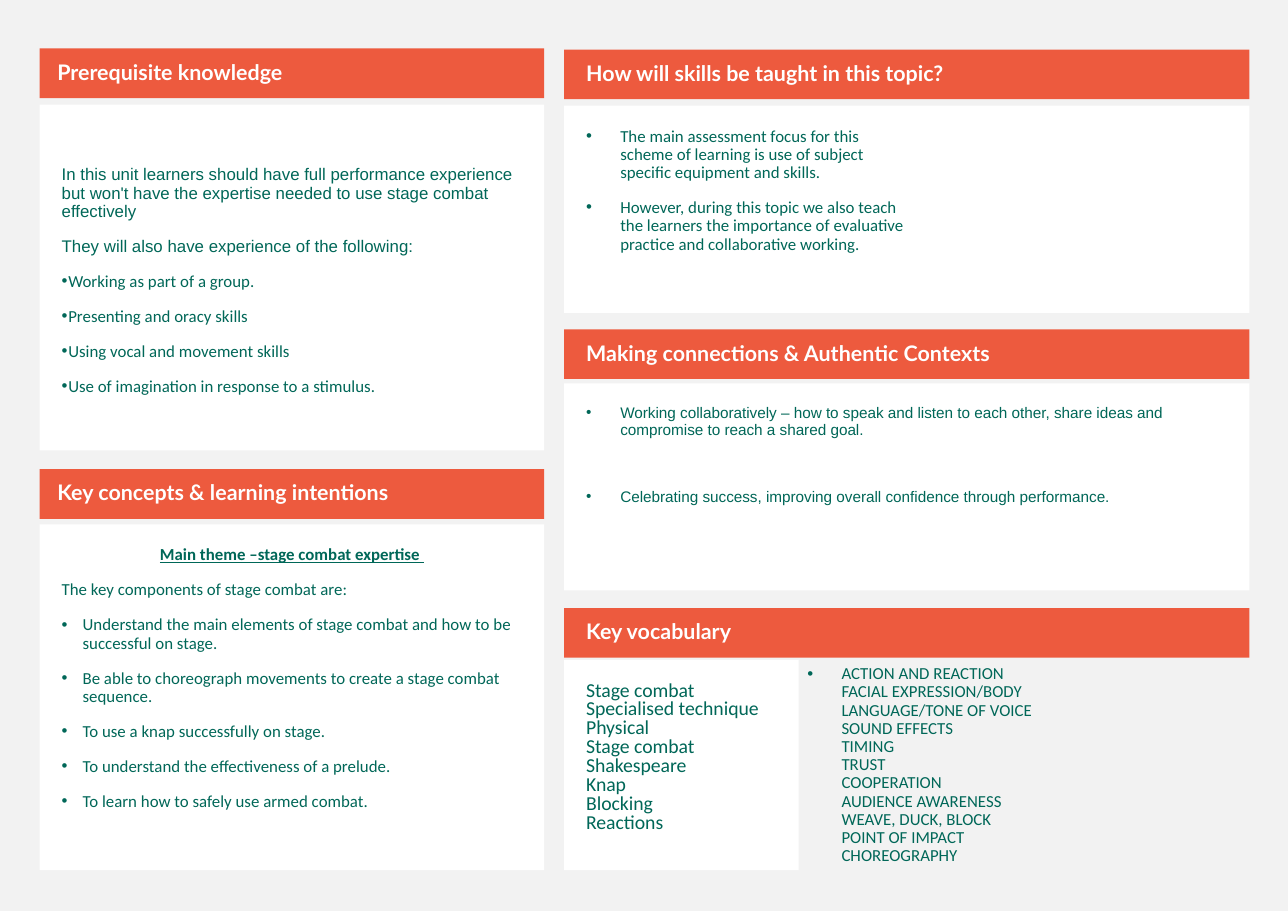
import pptx
import pptx.util
import pptx.dml.color
import pptx.enum.shapes
import pptx.enum.text
import lxml.etree

Inches = pptx.util.Inches
Pt = pptx.util.Pt
ALIGN = pptx.enum.text.PP_ALIGN
ANCHOR = pptx.enum.text.MSO_ANCHOR
COLOURS = {"page": "F2F2F2", "banner": "ED5A3E", "panel": "FFFFFF",
           "text": "006758", "title": "FFFFFF"}
BANNER_HEIGHT = 0.45
PANEL_INSETS = (0.2, 0.2, 0.2, 0.2)

PREREQUISITES = [
    "In this unit learners should have full performance experience but won't "
    "have the expertise needed to use stage combat effectively",
    "They will also have experience of the following:",
]
EXPERIENCE = ["Working as part of a group.", "Presenting and oracy skills",
              "Using vocal and movement skills",
              "Use of imagination in response to a stimulus."]
INTENTIONS = [
    "Understand the main elements of stage combat and how to be successful on stage.",
    "Be able to choreograph movements to create a stage combat sequence.",
    "To use a knap successfully on stage.",
    "To understand the effectiveness of a prelude.",
    "To learn how to safely use armed combat.",
]
SKILLS = [
    "The main assessment focus for this scheme of learning is use of subject "
    "specific equipment and skills.",
    "However, during this topic we also teach the learners the importance of "
    "evaluative practice and collaborative working.",
]
CONNECTIONS = [
    "Working collaboratively – how to speak and listen to each other, share ideas "
    "and compromise to reach a shared goal.",
    "Celebrating success, improving overall confidence through performance.",
]
VOCABULARY = ["Stage combat", "Specialised technique", "Physical", "Stage combat",
              "Shakespeare", "Knap", "Blocking", "Reactions"]
TERMS = ["ACTION AND REACTION", "FACIAL EXPRESSION/BODY LANGUAGE/TONE OF VOICE",
         "SOUND EFFECTS", "TIMING", "TRUST", "COOPERATION", "AUDIENCE AWARENESS",
         "WEAVE, DUCK, BLOCK", "POINT OF IMPACT", "CHOREOGRAPHY"]


def colour(name):
    return pptx.dml.color.RGBColor.from_string(COLOURS[name])


def set_frame(frame, insets, anchor=ANCHOR.TOP):
    frame.word_wrap = True
    frame.vertical_anchor = anchor
    (frame.margin_left, frame.margin_top,
     frame.margin_right, frame.margin_bottom) = map(Inches, insets)


def add_box(page, box, fill, insets, anchor=ANCHOR.TOP):
    shape = page.shapes.add_shape(pptx.enum.shapes.MSO_SHAPE.RECTANGLE, *map(Inches, box))
    shape.shadow.inherit = False
    shape.fill.solid()
    shape.fill.fore_color.rgb = colour(fill)
    shape.line.fill.background()
    set_frame(shape.text_frame, insets, anchor)
    return shape.text_frame


def add_bullet(para, hang):
    properties = para._p.get_or_add_pPr()
    properties.set("marL", str(Inches(hang)))
    properties.set("indent", str(-Inches(hang)))
    for tag, key, value in (("a:buFont", "typeface", "Arial"), ("a:buChar", "char", "•")):
        element = lxml.etree.SubElement(properties, pptx.oxml.ns.qn(tag))
        element.set(key, value)


def add_span(para, text, font="Calibri", size=11, ink="text", bold=False, underline=False):
    span = para.add_run()
    span.text = text
    span.font.name = font
    span.font.size = Pt(size)
    span.font.bold = bold
    span.font.underline = underline
    span.font.color.rgb = colour(ink)


def add_para(frame, lines, hang=None, before=11, spacing=0.9, align=ALIGN.LEFT, **look):
    para = frame.paragraphs[0]
    if para.runs:
        para = frame.add_paragraph()
    para.alignment = align
    para.line_spacing = spacing
    para.space_before = Pt(before)
    if hang is not None:
        add_bullet(para, hang)
    for number, line in enumerate(lines):
        if number:
            para.add_line_break()
        add_span(para, line, **look)


def add_banner(page, box, title, inset):
    left, top, width, _ = box
    frame = add_box(page, (left, top, width, BANNER_HEIGHT), "banner",
                    (inset, 0.05, 0.1, 0.05), ANCHOR.MIDDLE)
    add_para(frame, [title], font="Lato", size=14, ink="title", bold=True)


def add_panel(page, box, offset, insets=PANEL_INSETS):
    left, top, width, height = box
    return add_box(page, (left, top + offset, width, height - offset), "panel", insets)


def prerequisite_region(page, box):
    frame = add_panel(page, box, 0.51, (0.2, 0.56, 0.2, 0.2))
    add_banner(page, box, "Prerequisite knowledge", 0.16)
    for text in PREREQUISITES:
        add_para(frame, [text], font="Arial")
    for text in EXPERIENCE:
        add_para(frame, [text], hang=0.06)


def concepts_region(page, box):
    frame = add_panel(page, box, 0.5)
    add_banner(page, box, "Key concepts & learning intentions", 0.16)
    add_para(frame, ["Main theme –stage combat expertise "], align=ALIGN.CENTER,
             bold=True, underline=True)
    add_para(frame, ["The key components of stage combat are:"])
    for text in INTENTIONS:
        add_para(frame, [text], hang=0.19)


def skills_region(page, box):
    frame = add_panel(page, box, 0.51)
    add_banner(page, box, "How will skills be taught in this topic?", 0.2)
    frame._txBody.bodyPr.set("numCol", "2")
    for text in SKILLS:
        add_para(frame, [text], hang=0.31)


def connections_region(page, box):
    frame = add_panel(page, box, 0.49)
    add_banner(page, box, "Making connections & Authentic Contexts", 0.2)
    for text in CONNECTIONS:
        add_para(frame, [text], hang=0.31, before=33, font="Arial", size=10)


def vocabulary_region(page, box):
    left, top, width, height = box
    frame = add_panel(page, (left, top, 2.13, height), 0.47)
    add_banner(page, box, "Key vocabulary", 0.2)
    for word in VOCABULARY:
        add_para(frame, [word], before=0, spacing=0.8, size=12.9)
    terms = page.shapes.add_textbox(Inches(left + 2.11), Inches(top + 0.47),
                                    Inches(2.54), Inches(2.2))
    set_frame(terms.text_frame, (0.1, 0.05, 0.1, 0.05))
    add_para(terms.text_frame, TERMS, hang=0.31, before=10)


def main():
    deck = pptx.Presentation()
    deck.slide_width = Inches(11.69)
    deck.slide_height = Inches(8.27)
    page = deck.slides.add_slide(deck.slide_layouts[6])
    page.background.fill.solid()
    page.background.fill.fore_color.rgb = colour("page")
    prerequisite_region(page, (0.36, 0.44, 4.58, 3.65))
    concepts_region(page, (0.36, 4.26, 4.58, 3.64))
    skills_region(page, (5.12, 0.45, 6.22, 2.39))
    connections_region(page, (5.12, 2.99, 6.22, 2.37))
    vocabulary_region(page, (5.12, 5.52, 6.22, 2.38))
    deck.save("out.pptx")


if __name__ == "__main__":
    main()
